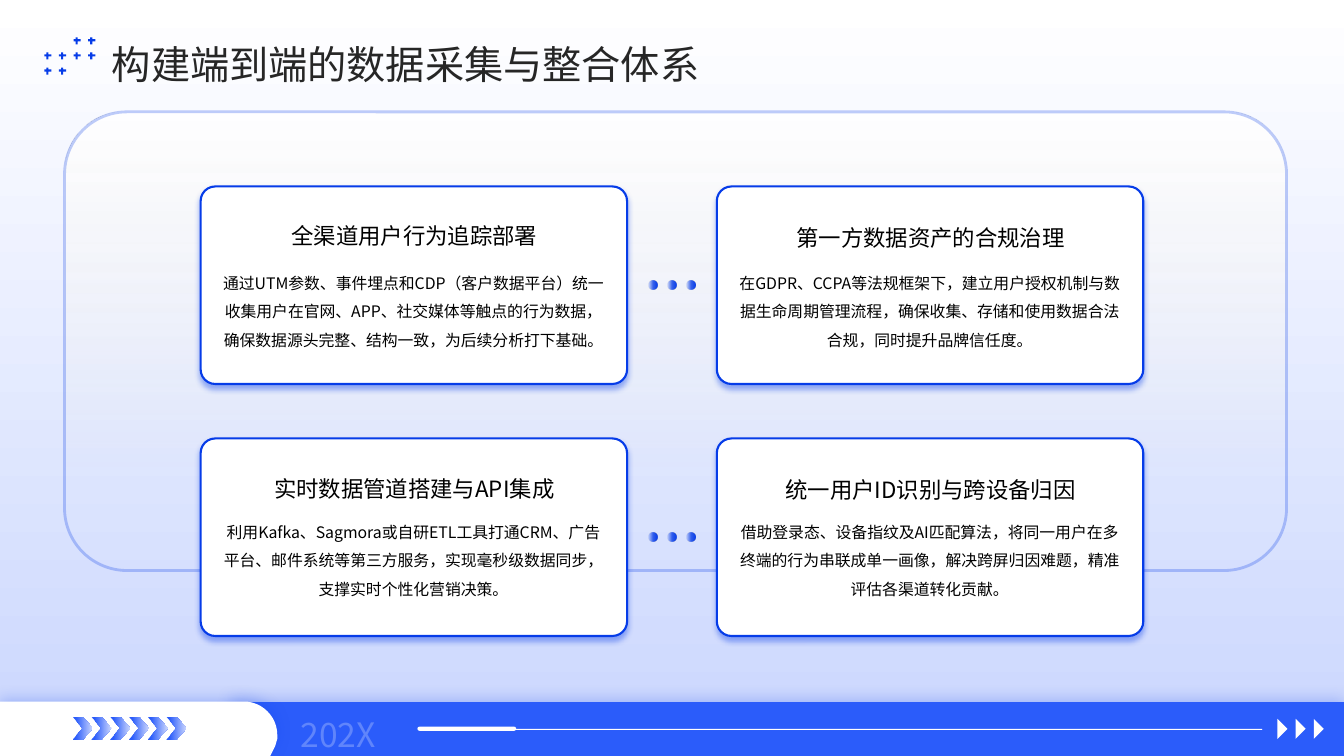
from lxml import etree
from pptx import Presentation
from pptx.dml.color import RGBColor
from pptx.enum.shapes import MSO_SHAPE
from pptx.enum.text import MSO_ANCHOR, MSO_AUTO_SIZE, PP_ALIGN
from pptx.oxml.ns import qn
from pptx.util import Inches, Pt

FONT = "Noto Sans CJK SC"
BLUE = RGBColor(0x06, 0x3C, 0xE8)
BAR_BLUE = RGBColor(0x2B, 0x5C, 0xFA)
PALE_BLUE = RGBColor(0xCA, 0xD6, 0xFE)
YEAR_BLUE = RGBColor(0x60, 0x85, 0xFB)
GREY = RGBColor(0xED, 0xED, 0xED)
INK = RGBColor(0x26, 0x26, 0x26)
BLACK = RGBColor(0, 0, 0)
WHITE = RGBColor(0xFF, 0xFF, 0xFF)

TITLE = "构建端到端的数据采集与整合体系"
YEAR = "202X"
CARDS = [
    (0, 0, "全渠道用户行为追踪部署", 2.12, 0.35,
     "通过UTM参数、事件埋点和CDP（客户数据平台）统一收集用户在官网、APP、社交媒体等触点的行为数据，"
     "确保数据源头完整、结构一致，为后续分析打下基础。"),
    (0, 1, "第一方数据资产的合规治理", 2.12, 0.4,
     "在GDPR、CCPA等法规框架下，建立用户授权机制与数据生命周期管理流程，"
     "确保收集、存储和使用数据合法合规，同时提升品牌信任度。"),
    (1, 0, "实时数据管道搭建与API集成", 4.55, 0.51,
     "利用Kafka、Sagmora或自研ETL工具打通CRM、广告平台、邮件系统等第三方服务，"
     "实现毫秒级数据同步，支撑实时个性化营销决策。"),
    (1, 1, "统一用户ID识别与跨设备归因", 4.56, 0.51,
     "借助登录态、设备指纹及AI匹配算法，将同一用户在多终端的行为串联成单一画像，"
     "解决跨屏归因难题，精准评估各渠道转化贡献。"),
]
CARD_LEFTS = (1.99, 7.11)
CARD_TOPS = (1.85, 4.35)
BODY_TOPS = (2.57, 5.04)
PLUS_ROWS = [(2, 3), (0, 1, 2, 3), (0, 1)]
PLUS_OUTLINE = [(0.02, 0), (0.04, 0), (0.04, 0.02), (0.07, 0.02), (0.07, 0.04), (0.04, 0.04),
                (0.04, 0.07), (0.02, 0.07), (0.02, 0.04), (0, 0.04), (0, 0.02), (0.02, 0.02)]
BAR_TOP, BOTTOM = 6.96, 7.5


def set_alpha(color, percent):
    etree.SubElement(color, qn("a:alpha")).set("val", str(percent * 1000))


def paint_gradient(fill, owner, stops, angle):
    fill.gradient()
    fill.gradient_angle = -angle % 360
    stop_list = next(owner.iter(qn("a:gsLst")))
    for stop in list(stop_list):
        stop_list.remove(stop)
    for position, rgb, alpha in stops:
        stop = etree.SubElement(stop_list, qn("a:gs"), pos=str(position * 1000))
        set_alpha(etree.SubElement(stop, qn("a:srgbClr"), val=str(rgb)), alpha)


def finish(shape, rgb=None):
    shape.shadow.inherit = False
    if rgb is not None:
        shape.fill.solid()
        shape.fill.fore_color.rgb = rgb
    shape.line.fill.background()
    return shape


def add_preset(page, preset, left, top, width, height, rgb=None, corner=None):
    shape = page.shapes.add_shape(preset, *map(Inches, (left, top, width, height)))
    if corner is not None:
        shape.adjustments[0] = corner
    return finish(shape, rgb)


def add_outline(page, contours, rgb):
    first, *others = [[(Inches(x), Inches(y)) for x, y in points] for points in contours]
    builder = page.shapes.build_freeform(*first[0])
    builder.add_line_segments(first[1:], close=True)
    for points in others:
        builder.move_to(*points[0])
        builder.add_line_segments(points[1:], close=True)
    return finish(builder.convert_to_shape(), rgb)


def add_line(shape, width):
    shape.line.color.rgb = BLUE
    shape.line.width = Pt(width)


def add_shadow(shape, alpha, blur, distance, angle):
    effects = shape._element.spPr.find(qn("a:effectLst"))
    shadow = etree.SubElement(effects, qn("a:outerShdw"), blurRad=str(Pt(blur)), dist=str(Pt(distance)),
                              dir=str(angle * 60000), algn="ctr", rotWithShape="0")
    set_alpha(etree.SubElement(shadow, qn("a:srgbClr"), val=str(BLUE)), alpha)


def write(box, text, size, rgb, spacing, align=PP_ALIGN.LEFT, anchor=MSO_ANCHOR.TOP, inset=True):
    frame = box.text_frame
    frame.word_wrap = True
    frame.auto_size = MSO_AUTO_SIZE.NONE
    frame.vertical_anchor = anchor
    if not inset:
        frame.margin_left = frame.margin_right = frame.margin_top = frame.margin_bottom = 0
    para = frame.paragraphs[0]
    para.alignment = align
    para.line_spacing = spacing
    para.space_before = Pt(0)
    span = para.add_run()
    span.text = text
    span.font.size = Pt(size)
    span.font.name = FONT
    span.font.color.rgb = rgb
    etree.SubElement(span.font._element, qn("a:ea"), typeface=FONT)


def add_text(page, left, top, width, height, *args, **options):
    write(page.shapes.add_textbox(*map(Inches, (left, top, width, height))), *args, **options)


def add_title(page):
    title = page.shapes.title
    title.left, title.top, title.width, title.height = map(Inches, (1.11, 0.26, 11.35, 0.59))
    write(title, TITLE, 28, INK, 1.3, inset=False)
    pluses = [[(0.44 + 0.145 * column + x, 0.37 + 0.15 * row + y) for x, y in PLUS_OUTLINE]
              for row, columns in enumerate(PLUS_ROWS) for column in columns]
    add_outline(page, pluses, BLUE)


def add_cards(page):
    panel = add_preset(page, MSO_SHAPE.ROUNDED_RECTANGLE, 0.64, 1.11, 12.12, 4.55, corner=0.136)
    paint_gradient(panel.fill, panel._element, [(21, GREY, 0), (100, WHITE, 100)], 270)
    add_line(panel, 2)
    set_alpha(next(panel.line._ln.iter(qn("a:srgbClr"))), 26)
    for row, column, heading, heading_top, heading_height, body in CARDS:
        left = CARD_LEFTS[column]
        card = add_preset(page, MSO_SHAPE.ROUNDED_RECTANGLE, left, CARD_TOPS[row], 4.23, 1.96, WHITE, 0.074)
        add_line(card, 1.5)
        add_shadow(card, 40, 4, 3, 90)
        add_text(page, left + 0.12, BODY_TOPS[row], 3.98, 1.04, body, 11.3, BLACK, 1.5, PP_ALIGN.CENTER)
        add_text(page, left + 0.24, heading_top, 3.76, heading_height, heading, 16, BLACK, 1.3,
                 PP_ALIGN.CENTER, MSO_ANCHOR.MIDDLE)
    for card_top in CARD_TOPS:
        for index in range(3):
            dot = add_preset(page, MSO_SHAPE.OVAL, 6.43 + 0.19 * index, card_top + 0.93, 0.09, 0.09)
            paint_gradient(dot.fill, dot._element, [(0, BLUE, 100), (49, BLUE, 79), (100, BLUE, 7)], 180)


def curve(start, control_1, control_2, end, steps=12):
    points = []
    for step in range(steps + 1):
        t = step / steps
        weights = ((1 - t) ** 3, 3 * t * (1 - t) ** 2, 3 * t * t * (1 - t), t ** 3)
        points.append(tuple(sum(w * p[axis] for w, p in zip(weights, (start, control_1, control_2, end)))
                            for axis in (0, 1)))
    return points


def add_footer(page):
    bar = add_outline(page, [[(2.28, BAR_TOP), (13.33, BAR_TOP), (13.33, BOTTOM), (2.28, BOTTOM)]], BAR_BLUE)
    shoulder = curve((2.42, BAR_TOP), (2.6, BAR_TOP), (2.75, 7.11), (2.75, 7.29))
    tab = add_outline(page, [[(0, BAR_TOP), *shoulder, (2.75, 7.33), (2.73, 7.4), (2.68, BOTTOM),
                              (0, BOTTOM)]], WHITE)
    for shape in (bar, tab):
        add_shadow(shape, 20, 10, 3, 270)
    for index in range(6):
        chevron = add_preset(page, MSO_SHAPE.CHEVRON, 0.72 + 0.186 * index, 7.11, 0.2, 0.23)
        paint_gradient(chevron.fill, chevron._element, [(16, BAR_BLUE, 100), (100, PALE_BLUE, 100)], 0)
    add_text(page, 2.98, 7.04, 1.08, 0.32, YEAR, 24, YEAR_BLUE, 1.1, inset=False)
    for left, top, width, height in [(4.14, 7.21, 0.98, 0.04), (4.69, 7.23, 7.83, 0.01)]:
        add_preset(page, MSO_SHAPE.ROUNDED_RECTANGLE, left, top, width, height, WHITE, 0.5)
    for index in range(3):
        arrow = add_preset(page, MSO_SHAPE.RIGHT_TRIANGLE, 12.6 + 0.18 * index, 7.16, 0.14, 0.14, WHITE)
        arrow.rotation = 225


def main():
    """Build the data collection slide and save it."""
    deck = Presentation()
    deck.slide_width, deck.slide_height = Inches(13.33), Inches(7.5)
    page = deck.slides.add_slide(deck.slide_layouts[5])
    paint_gradient(page.background.fill, page._element, [(0, WHITE, 100), (100, PALE_BLUE, 100)], 90)
    add_cards(page)
    add_footer(page)
    add_title(page)
    deck.save("out.pptx")


if __name__ == "__main__":
    main()
